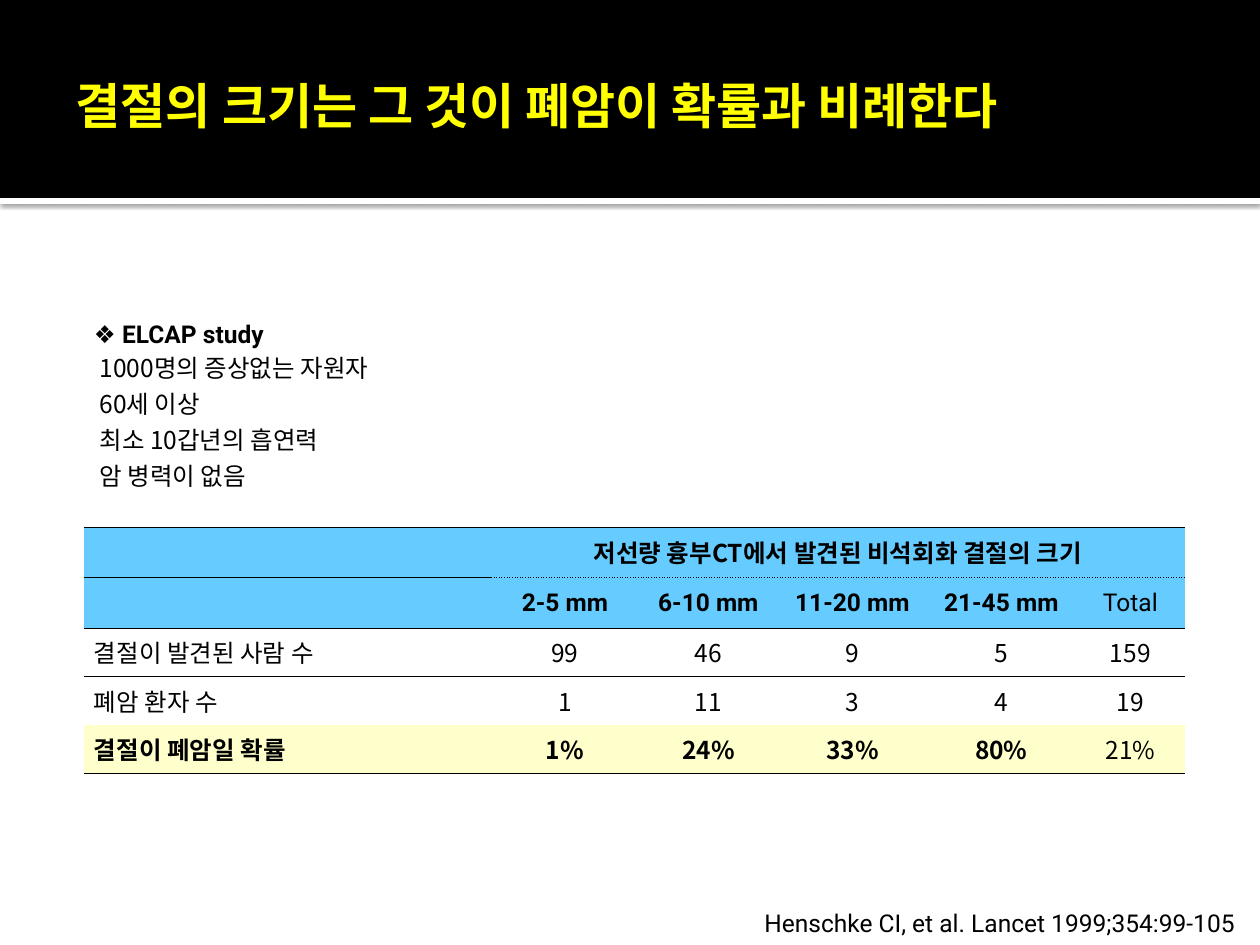
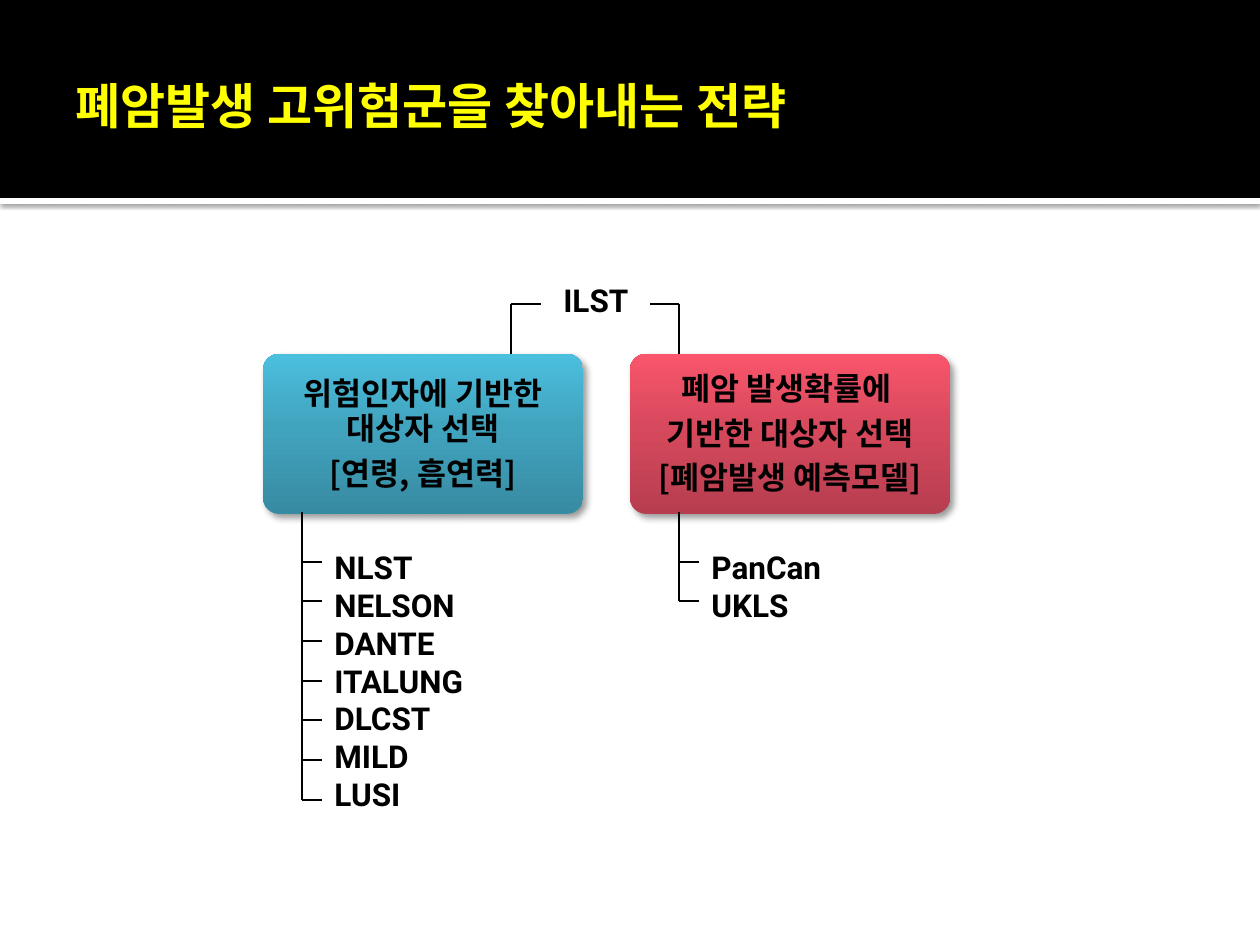
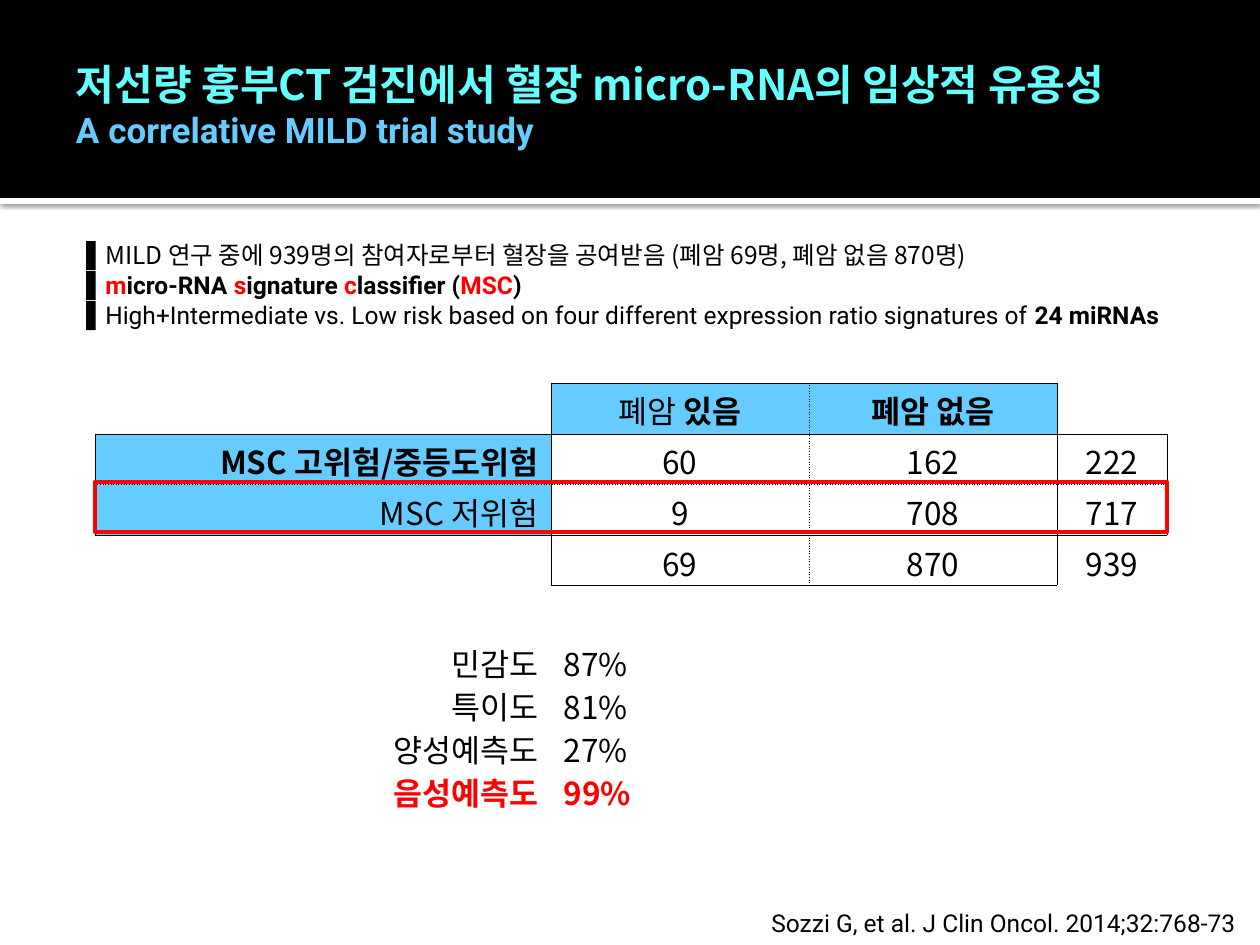
"""Build three slides on lung nodules, screening strategy and a plasma micro-RNA trial."""
from dataclasses import dataclass

from lxml.etree import SubElement
from pptx import Presentation
from pptx.dml.color import RGBColor
from pptx.enum.shapes import MSO_CONNECTOR, MSO_SHAPE
from pptx.enum.text import MSO_ANCHOR, PP_ALIGN
from pptx.oxml import parse_xml
from pptx.oxml.ns import nsdecls, qn
from pptx.util import Inches, Pt


@dataclass(frozen=True)
class Theme:
    black: str = "000000"
    white: str = "FFFFFF"
    yellow: str = "FFFF00"
    cyan: str = "66FFFF"
    sky: str = "66CCFF"
    cream: str = "FFFFCC"
    red: str = "FF0000"
    blues: tuple = ("378BA2", "41A4BF", "4BBFDE")
    roses: tuple = ("B73E4F", "D7495D", "FA556C")
    korean: str = "Noto Sans CJK KR"
    latin: str = "Roboto"
    title: int = 28
    long_title: int = 24
    subtitle: int = 20
    body: int = 18
    small: int = 14


THEME = Theme()
PX = Inches(10) // 1260
NO_GRID = "{2D5ABB26-0587-4C30-8999-92F81FD0307C}"
LEFT, CENTER, RIGHT = PP_ALIGN.LEFT, PP_ALIGN.CENTER, PP_ALIGN.RIGHT


def write(frame, paragraphs, align=LEFT, spacing=None, after=0, **base):
    """Fill a text frame; a paragraph is a string or a list of (text, format) runs."""
    frame.word_wrap = True
    for index, runs in enumerate(paragraphs):
        paragraph = frame.paragraphs[0] if index == 0 else frame.add_paragraph()
        paragraph.alignment = align
        paragraph.line_spacing = spacing
        paragraph.space_after = Pt(after)
        for text, extra in [(runs, {})] if isinstance(runs, str) else runs:
            if text == "\n":
                paragraph.add_line_break()
                continue
            look = {"font": THEME.latin, "size": THEME.small, "color": THEME.black,
                    "bold": False, **base, **extra}
            run = paragraph.add_run()
            run.text = text
            run.font.size = Pt(look["size"])
            run.font.bold = look["bold"]
            run.font.color.rgb = RGBColor.from_string(look["color"])
            run.font.name = look["font"]
            SubElement(run._r.get_or_add_rPr(), qn("a:ea"), typeface=look["font"])


def place(slide, kind, box, fill=None, shadow=None):
    """Add a shape without outline; shadow is (alpha %, blur pt, distance pt, angle)."""
    shape = slide.shapes.add_shape(kind, *(n * PX for n in box))
    shape.shadow.inherit = False
    shape.line.fill.background()
    if fill:
        shape.fill.solid()
        shape.fill.fore_color.rgb = RGBColor.from_string(fill)
    else:
        shape.fill.background()
    if shadow:
        alpha, blur, distance, angle = shadow
        shape._element.spPr.find(qn("a:effectLst")).append(parse_xml(
            f'<a:outerShdw {nsdecls("a")} blurRad="{Pt(blur)}" dist="{Pt(distance)}" '
            f'dir="{angle * 60000}" algn="ctr" rotWithShape="0"><a:srgbClr val="{THEME.black}">'
            f'<a:alpha val="{alpha * 1000}"/></a:srgbClr></a:outerShdw>'))
    return shape


deck = Presentation()
deck.slide_width, deck.slide_height = Inches(10), Inches(7.5)

headings = [
    [("결절의 크기는 그 것이 폐암이 확률과 비례한다", {"font": THEME.korean})],
    [("폐암발생 고위험군을 찾아내는 전략", {})],
    [("저선량 흉부CT 검진에서 혈장 micro-RNA의 임상적 유용성",
      {"font": THEME.korean, "size": THEME.long_title, "color": THEME.cyan}),
     ("\n", {}),
     ("A correlative MILD trial study", {"size": THEME.subtitle, "color": THEME.sky})],
]
for heading in headings:
    slide = deck.slides.add_slide(deck.slide_layouts[6])
    place(slide, MSO_SHAPE.RECTANGLE, (0, 198, 1260, 6), THEME.white, (60, 2.5, 0.8, 90))
    place(slide, MSO_SHAPE.RECTANGLE, (0, 0, 1260, 198), THEME.black)
    frame = slide.shapes.add_textbox(63 * PX, 18 * PX, 1162 * PX, 173 * PX).text_frame
    frame.margin_left, frame.margin_right = 13 * PX, 6 * PX
    frame.vertical_anchor = MSO_ANCHOR.MIDDLE
    write(frame, [heading], size=THEME.title, color=THEME.yellow, bold=True)
nodules, strategy, trial = deck.slides

for slide, left, citation in [
    (nodules, 752, "Henschke CI, et al. Lancet 1999;354:99-105"),
    (trial, 759, "Sozzi G, et al. J Clin Oncol. 2014;32:768-73"),
]:
    frame = slide.shapes.add_textbox(left * PX, 902 * PX, (1260 - left) * PX, 43 * PX).text_frame
    write(frame, [citation])

size_rows = [
    ["", "저선량 흉부CT에서 발견된 비석회화 결절의 크기", "", "", "", ""],
    ["", "2-5 mm", "6-10 mm", "11-20 mm", "21-45 mm", "Total"],
    ["결절이 발견된 사람 수", "99", "46", "9", "5", "159"],
    ["폐암 환자 수", "1", "11", "3", "4", "19"],
    ["결절이 폐암일 확률", "1%", "24%", "33%", "80%", "21%"],
]
size_widths = [407, 148, 139, 149, 149, 109]
size_heights = [213, 48, 42, 48, 49, 48]
risk_rows = [
    ["", "폐암 있음", "폐암 없음", ""],
    ["MSC 고위험/중등도위험", "60", "162", "222"],
    ["MSC 저위험", "9", "708", "717"],
    ["", "69", "870", "939"],
    ["", "", "", ""],
    ["민감도", "87%", "", ""],
    ["특이도", "81%", "", ""],
    ["양성예측도", "27%", "", ""],
    ["음성예측도", "99%", "", ""],
]
risk_widths = [456, 258, 248, 110]
risk_heights = [51, 50, 51, 50, 57, 43, 43, 43, 43]

grids = []
for slide, left, top, widths, heights in [
    (nodules, 84, 314, size_widths, size_heights),
    (trial, 95, 383, risk_widths, risk_heights),
]:
    grid = slide.shapes.add_table(len(heights), len(widths), left * PX, top * PX,
                                  sum(widths) * PX, sum(heights) * PX).table
    grid._tbl.tblPr[0].text = NO_GRID
    grid.first_row = grid.horz_banding = False
    for column, width in zip(grid.columns, widths):
        column.width = width * PX
    for row, height in zip(grid.rows, heights):
        row.height = height * PX
    for cell in grid.iter_cells():
        cell.fill.background()
    grids.append(grid)
size_grid, risk_grid = grids

edges = []
size_grid.cell(0, 0).merge(size_grid.cell(0, 5))
size_grid.cell(1, 1).merge(size_grid.cell(1, 5))
study = size_grid.cell(0, 0)
study.margin_left = study.margin_right = 10 * PX
write(study.text_frame, [
    [("❖ ELCAP study", {"font": THEME.latin, "bold": True})],
    " 1000명의 증상없는 자원자", " 60세 이상", " 최소 10갑년의 흡연력", " 암 병력이 없음",
], font=THEME.korean)
for r, texts in enumerate(size_rows, 1):
    for c, text in enumerate(texts):
        cell = size_grid.cell(r, c)
        cell.vertical_anchor = MSO_ANCHOR.MIDDLE
        cell.margin_left = cell.margin_right = (5 if c else 10) * PX
        if r != 3 and r != 4:
            cell.fill.solid()
            cell.fill.fore_color.rgb = RGBColor.from_string(THEME.cream if r == 5 else THEME.sky)
        if not cell.is_spanned:
            write(cell.text_frame, [text], align=CENTER if c else LEFT,
                  font=THEME.latin if r == 2 else THEME.korean,
                  bold=r == 1 or r == 5 and c < 5 or r == 2 and c < 5)
        if r == 1:
            edges.append((cell, "T", "solid"))
        if r != 4:
            edges.append((cell, "B", "sysDot" if r == 1 and c else "solid"))

for r, texts in enumerate(risk_rows):
    for c, text in enumerate(texts):
        cell = risk_grid.cell(r, c)
        cell.margin_top, cell.margin_bottom = (8 if r < 4 else 1) * PX, 0
        if r == 0 and c in (1, 2) or c == 0 and r in (1, 2):
            cell.fill.solid()
            cell.fill.fore_color.rgb = RGBColor.from_string(THEME.sky)
        runs = [("폐암 ", {"bold": False}), ("있음", {})] if (r, c) == (0, 1) else text
        write(cell.text_frame, [runs], spacing=Pt(24), font=THEME.korean, size=THEME.body,
              align=RIGHT if c == 0 else CENTER if r < 4 else LEFT,
              bold=r in (0, 8) or (r, c) == (1, 0),
              color=THEME.red if r == 8 else THEME.black)
        if r in (1, 2) or r < 4 and c in (1, 2):
            dotted = {"L": c == 2, "R": c == 1, "T": r == 2, "B": r == 1}
            edges += [(cell, side, "sysDot" if dots else "solid") for side, dots in dotted.items()]

for cell, side, dash in edges:
    properties = cell._tc.get_or_add_tcPr()
    position = len(properties.findall(qn("a:lnL")) + properties.findall(qn("a:lnR"))
                   + properties.findall(qn("a:lnT")))
    properties.insert(position, parse_xml(
        f'<a:ln{side} {nsdecls("a")} w="{Pt(0.25)}"><a:solidFill><a:srgbClr val="{THEME.black}"/>'
        f'</a:solidFill><a:prstDash val="{dash}"/></a:ln{side}>'))

low_risk = place(trial, MSO_SHAPE.RECTANGLE, (95, 482, 1072, 50))
low_risk.line.color.rgb = RGBColor.from_string(THEME.red)
low_risk.line.width = Pt(2.5)

red = {"color": THEME.red}
findings = trial.shapes.add_textbox(74 * PX, 234 * PX, 1138 * PX, 102 * PX).text_frame
write(findings, [
    [("▌", {}), ("MILD 연구 중에 939명의 참여자로부터 혈장을 공여받음 (폐암 69명, 폐암 없음 870명)",
                 {"font": THEME.korean})],
    [("▌", {"bold": False})] + [(text, {"bold": True, **look}) for text, look in [
        ("m", red), ("icro-RNA ", {}), ("s", red), ("ignature ", {}), ("c", red),
        ("lassifier (", {}), ("MSC", red), (")", {})]],
    [("▌High+Intermediate vs. Low risk based on four different expression ratio signatures of ", {}),
     ("24 miRNAs", {"bold": True})],
], spacing=Pt(17))

branches = [(511, 304, 511, 354), (511, 304, 541, 304), (679, 304, 679, 354), (679, 304, 650, 304)]
for card_left, spine, shades, criteria, trials in [
    (263, 302, THEME.blues, ["위험인자에 기반한 대상자 선택", "[연령, 흡연력]"],
     ["NLST", "NELSON", "DANTE", "ITALUNG", "DLCST", "MILD", "LUSI"]),
    (630, 679, THEME.roses, ["폐암 발생확률에 ", "기반한 대상자 선택", "[폐암발생 예측모델]"],
     ["PanCan", "UKLS"]),
]:
    card = place(strategy, MSO_SHAPE.ROUNDED_RECTANGLE, (card_left, 354, 320, 160),
                 shades[0], (40, 4, 3, 45))
    card.adjustments[0] = 0.1
    stops = "".join(f'<a:gs pos="{position}000"><a:srgbClr val="{shade}"/></a:gs>'
                    for position, shade in zip((0, 55, 100), shades))
    flat = card._element.spPr.find(qn("a:solidFill"))
    card._element.spPr.replace(flat, parse_xml(
        f'<a:gradFill {nsdecls("a")}><a:gsLst>{stops}</a:gsLst><a:lin ang="16200000"/></a:gradFill>'))
    card.text_frame.margin_left = card.text_frame.margin_right = 4 * PX
    card.text_frame.vertical_anchor = MSO_ANCHOR.MIDDLE
    write(card.text_frame, criteria, align=CENTER, spacing=Pt(20), after=5.5,
          font=THEME.korean, size=THEME.body, bold=True)
    names = strategy.shapes.add_textbox((spine + 20) * PX, 542 * PX, 171 * PX,
                                        (13 + 38 * len(trials)) * PX).text_frame
    write(names, trials, size=THEME.body, bold=True)
    ticks = [562 + 238 * index // 6 for index in range(len(trials))]
    branches.append((spine, 512, spine, ticks[-1]))
    branches += [(spine, tick, spine + 20, tick) for tick in ticks]

root = strategy.shapes.add_textbox(551 * PX, 275 * PX, 98 * PX, 50 * PX).text_frame
write(root, ["ILST"], size=THEME.body, bold=True)
for ends in branches:
    branch = strategy.shapes.add_connector(MSO_CONNECTOR.STRAIGHT, *(n * PX for n in ends))
    branch.line.color.rgb = RGBColor.from_string(THEME.black)
    branch.line.width = Pt(1)
    SubElement(branch._element.spPr, qn("a:effectLst"))

deck.save("out.pptx")
